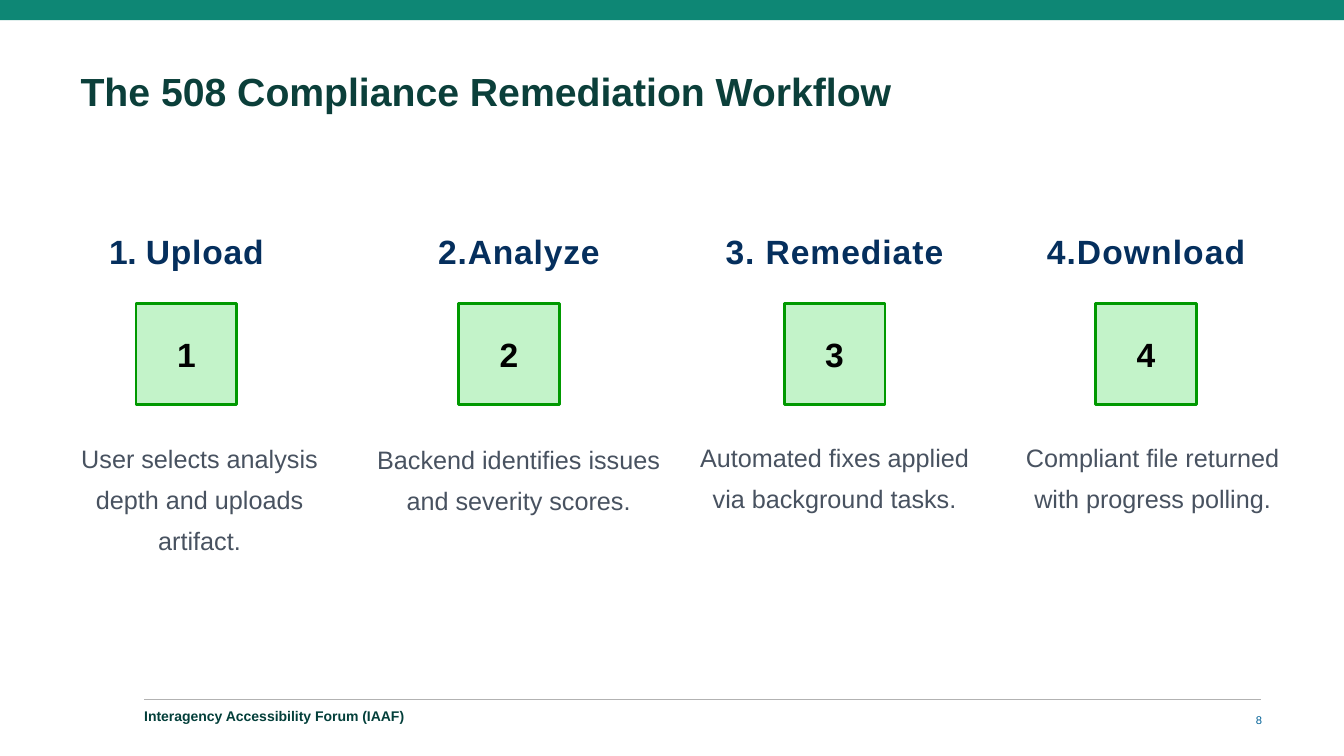
from lxml.etree import SubElement
from pptx import Presentation
from pptx.dml.color import RGBColor
from pptx.enum.shapes import MSO_CONNECTOR, MSO_SHAPE
from pptx.enum.text import MSO_ANCHOR, MSO_AUTO_SIZE, PP_ALIGN
from pptx.oxml.ns import qn
from pptx.util import Pt

COLORS = {
    "band": "0E8775",
    "rule": "B2B2B2",
    "footer": "033F3A",
    "title": "0B3F3A",
    "heading": "052F5D",
    "box_fill": "C3F3C9",
    "box_line": "009900",
    "number": "000000",
    "description": "485260",
    "page": "006197",
}
HEADING_WIDTH = 180
BOX_SIZE = 72

# Each step: heading runs with letter spacing, heading centre, box left,
# description, and the description's left, top, width, height and line spacing.
STEPS = [
    ([("1. ", -0.2), ("Upload", 0.6)], 133.2, 97.2,
     "User selects analysis depth and uploads artifact.",
     (41.76, 308.16, 201.6, 85.68), 1.35),
    ([("2.Analyze", 0.6)], 370.8, 327.6,
     "Backend identifies issues and severity scores.",
     (262.8, 308.88, 215.28, 56.16), 1.35),
    ([("3. ", 0.6), ("Remediate", 0.7)], 596.16, 560.16,
     "Automated fixes applied via background tasks.",
     (493.92, 308.16, 204.48, 55.44), 1.33),
    ([("4.Download", 0.8)], 818.64, 782.64,
     "Compliant file returned with progress polling.",
     (717.84, 308.16, 210.96, 55.44), 1.33),
]


def color(name):
    return RGBColor.from_string(COLORS[name])


def write_text(frame, text, *, size, color_name, bold=False, align=PP_ALIGN.LEFT,
               anchor=MSO_ANCHOR.TOP, line_spacing=None):
    """Fill a frame with one paragraph; text is a string or (text, letter spacing) pairs."""
    frame.word_wrap = True
    frame.vertical_anchor = anchor
    paragraph = frame.paragraphs[0]
    paragraph.alignment = align
    if line_spacing:
        paragraph.line_spacing = line_spacing
    for words, spacing in [(text, 0)] if isinstance(text, str) else text:
        run = paragraph.add_run()
        run.text = words
        run.font.name = "Arial"
        run.font.size = Pt(size)
        run.font.bold = bold
        run.font.color.rgb = color(color_name)
        if spacing:
            run._r.get_or_add_rPr().set("spc", str(round(spacing * 100)))


class SlideBuilder:
    def __init__(self, slide):
        self.slide = slide

    def rectangle(self, left, top, width, height, fill, line=None):
        shape = self.slide.shapes.add_shape(
            MSO_SHAPE.RECTANGLE, Pt(left), Pt(top), Pt(width), Pt(height))
        shape.shadow.inherit = False
        shape.fill.solid()
        shape.fill.fore_color.rgb = color(fill)
        if line:
            shape.line.color.rgb = color(line)
            shape.line.width = Pt(2)
        else:
            shape.line.fill.background()
        return shape

    def rule(self, left, right, y):
        connector = self.slide.shapes.add_connector(
            MSO_CONNECTOR.STRAIGHT, Pt(left), Pt(y), Pt(right), Pt(y))
        connector.line.color.rgb = color("rule")
        connector.line.width = Pt(0.75)
        SubElement(connector._element.spPr, qn("a:effectLst"))

    def text(self, left, top, width, height, text, *, inset_top=0, grow=False, **style):
        box = self.slide.shapes.add_textbox(Pt(left), Pt(top), Pt(width), Pt(height))
        frame = box.text_frame
        frame.margin_left = frame.margin_right = frame.margin_bottom = 0
        frame.margin_top = Pt(inset_top)
        if grow:
            frame.auto_size = MSO_AUTO_SIZE.SHAPE_TO_FIT_TEXT
        write_text(frame, text, **style)

    def step(self, number, heading, center, box_left, description, area, line_spacing):
        self.text(center - HEADING_WIDTH / 2, 164.16, HEADING_WIDTH, 36, heading,
                  inset_top=1, grow=True, size=24, color_name="heading",
                  bold=True, align=PP_ALIGN.CENTER)
        box = self.rectangle(box_left, 216.72, BOX_SIZE, BOX_SIZE, "box_fill", "box_line")
        write_text(box.text_frame, str(number), size=24, color_name="number", bold=True,
                   align=PP_ALIGN.CENTER, anchor=MSO_ANCHOR.MIDDLE)
        self.text(*area, description, inset_top=1, grow=True, size=18,
                  color_name="description", align=PP_ALIGN.CENTER,
                  line_spacing=line_spacing)


def main():
    presentation = Presentation()
    presentation.slide_width = Pt(960)
    presentation.slide_height = Pt(540)
    builder = SlideBuilder(presentation.slides.add_slide(presentation.slide_layouts[6]))

    builder.rectangle(0, 0, 960, 14.4, "band")
    builder.rule(103, 900.7, 499.7)
    builder.text(103, 506.9, 504.7, 13.7, "Interagency Accessibility Forum (IAAF)",
                 size=10, color_name="footer", bold=True,
                 anchor=MSO_ANCHOR.MIDDLE, line_spacing=0.5)
    builder.text(57.6, 48.24, 844.56, 33.84, "The 508 Compliance Remediation Workflow",
                 inset_top=3.6, grow=True, size=28, color_name="title",
                 bold=True, line_spacing=0.9)
    for number, step in enumerate(STEPS, start=1):
        builder.step(number, *step)
    builder.text(859.7, 506.9, 41.8, 14.4, "8", size=8, color_name="page",
                 align=PP_ALIGN.RIGHT, anchor=MSO_ANCHOR.MIDDLE)

    presentation.save("out.pptx")


if __name__ == "__main__":
    main()
